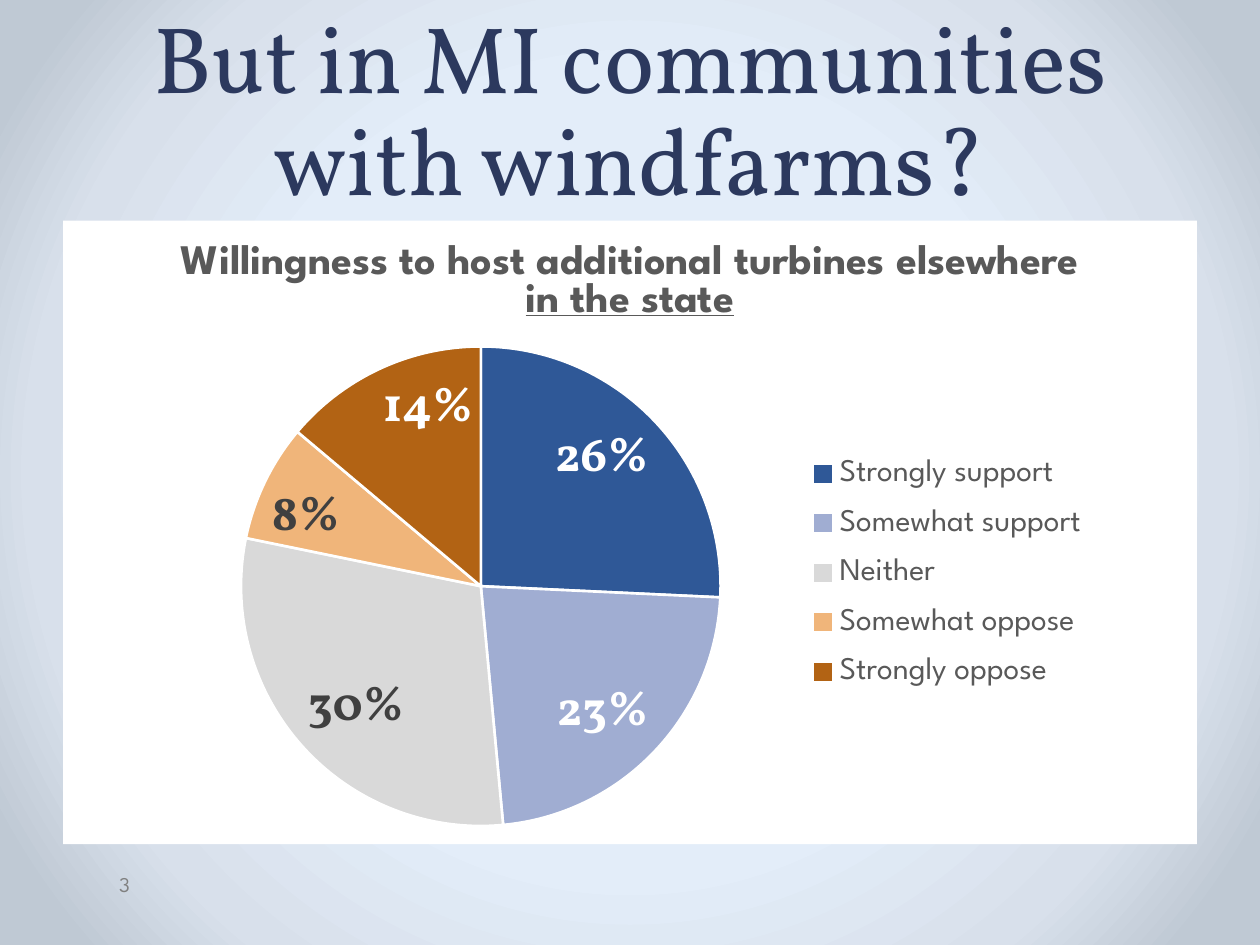
from lxml import etree
from pptx import Presentation, util as u
from pptx.chart.data import CategoryChartData
from pptx.dml.color import RGBColor
from pptx.enum import chart as ch, text as tx
from pptx.oxml import parse_xml
from pptx.oxml.ns import nsdecls, qn

# Content
TITLE = "But in MI communities with windfarms?"
HEAD = [("Willingness to host additional turbines elsewhere ", False),
        ("in the state", True)]
PAGE = "3"
# answer, share, slice colour, label colour
DATA = [
    ("Strongly support", 0.26, "2F5897", "FFFFFF"),
    ("Somewhat support", 0.23, "A0ADD2", "FFFFFF"),
    ("Neither", 0.30, "D9D9D9", "404040"),
    ("Somewhat oppose", 0.08, "F0B57A", "404040"),
    ("Strongly oppose", 0.14, "B26314", "FFFFFF"),
]
THEME = {
    "serif": "Vollkorn", "sans": "League Spartan",
    "title": (54, "2C395E"), "head": (24, "595959"), "key": (18, "595959"),
    "label": 28, "page": (12, "808080"), "white": "FFFFFF",
    "back": [(50, "E3EDF9"), (76, "D8E0EB"), (92, "BFC9D4")],
}


def style(font, face, size, color, bold=False):
    font.name, font.size, font.bold = face, u.Pt(size), bold
    font.color.rgb = RGBColor.from_string(color)


def paint(fill, color):
    fill.solid()
    fill.fore_color.rgb = RGBColor.from_string(color)


def add_text(slide, box, words, face, look, align, anchor, lead=None):
    shape = slide.shapes.add_textbox(*map(u.Inches, box))
    frame = shape.text_frame
    frame.word_wrap, frame.vertical_anchor = True, anchor
    frame.text = words
    para = frame.paragraphs[0]
    para.alignment = align
    if lead:
        para.line_spacing = u.Pt(lead)
    style(para.runs[0].font, face, *look)


def place(part, box, inner=False):
    """Fix a chart part at fractions of the chart area."""
    old = part.find(qn("c:layout"))
    if old is not None:
        part.remove(old)
    rows = [("xMode", "edge"), ("yMode", "edge"), *zip("xywh", box)]
    if inner:
        rows.insert(0, ("layoutTarget", "inner"))
    body = "".join(f'<c:{tag} val="{val}"/>' for tag, val in rows)
    node = parse_xml(f'<c:layout {nsdecls("c")}><c:manualLayout>{body}'
                     '</c:manualLayout></c:layout>')
    if inner:
        part.insert(0, node)
    else:
        part.find(qn("c:legendPos")).addnext(node)


prs = Presentation()
prs.slide_width, prs.slide_height = u.Inches(10), u.Inches(7.5)
slide = prs.slides.add_slide(prs.slide_layouts[6])

# Round background gradient
fill = slide.background.fill
fill.gradient()
grad = slide.background._cSld.find(".//" + qn("a:gradFill"))
for node in list(grad):
    grad.remove(node)
stops = etree.SubElement(grad, qn("a:gsLst"))
for pos, color in THEME["back"]:
    stop = etree.SubElement(stops, qn("a:gs"), pos=str(pos * 1000))
    etree.SubElement(stop, qn("a:srgbClr"), val=color)
ring = etree.SubElement(grad, qn("a:path"), path="circle")
etree.SubElement(ring, qn("a:fillToRect"), **dict.fromkeys("ltrb", "50000"))

# Title
add_text(slide, (0.5, 0, 9, 1.75), TITLE, THEME["serif"], THEME["title"],
         tx.PP_ALIGN.CENTER, tx.MSO_ANCHOR.BOTTOM, 58)

# Pie chart
data = CategoryChartData(number_format="0%")
data.categories = [row[0] for row in DATA]
data.add_series("Series 1", [row[1] for row in DATA])
box = map(u.Inches, (0.5, 1.75, 9, 4.95))
chart = slide.shapes.add_chart(ch.XL_CHART_TYPE.PIE, *box, data).chart
style(chart.font, THEME["serif"], 10, "000000")
area = parse_xml(f'<c:spPr {nsdecls("c", "a")}><a:solidFill><a:srgbClr '
                 f'val="{THEME["white"]}"/></a:solidFill><a:ln><a:noFill/>'
                 '</a:ln></c:spPr>')
chart._chartSpace.chart.addnext(area)

# Chart heading
chart.has_title = True
para = chart.chart_title.text_frame.paragraphs[0]
for words, under in HEAD:
    run = para.add_run()
    run.text = words
    style(run.font, THEME["sans"], *THEME["head"], bold=True)
    run.font.underline = under
chart.chart_title.include_in_layout = False

# Legend
chart.has_legend = True
key = chart.legend
key.position, key.include_in_layout = ch.XL_LEGEND_POSITION.RIGHT, False
style(key.font, THEME["sans"], *THEME["key"])
place(key._element, (0.65, 0.35, 0.26, 0.43))
place(chart._chartSpace.chart.plotArea, (0.157, 0.202, 0.423, 0.769), True)

# Slices and their labels
plot = chart.plots[0]
plot.vary_by_categories = True
plot.has_data_labels = True
tags = plot.series[0].data_labels
tags.show_value, tags.show_percentage = True, False
tags.number_format, tags.number_format_is_linked = "0%", False
tags.position = ch.XL_LABEL_POSITION.INSIDE_END
style(tags.font, THEME["serif"], THEME["label"], "404040", True)
for i, (_, _, color, ink) in enumerate(DATA):
    point = plot.series[0].points[i]
    paint(point.format.fill, color)
    paint(point.format.line.fill, THEME["white"])
    point.format.line.width = u.Pt(1.5)
    style(point.data_label.font, THEME["serif"], THEME["label"], ink, True)
    point.data_label.position = ch.XL_LABEL_POSITION.INSIDE_END

# Page number
add_text(slide, (0.52, 6.87, 0.61, 0.4), PAGE, THEME["sans"], THEME["page"],
         tx.PP_ALIGN.RIGHT, tx.MSO_ANCHOR.TOP)

prs.save("out.pptx")
